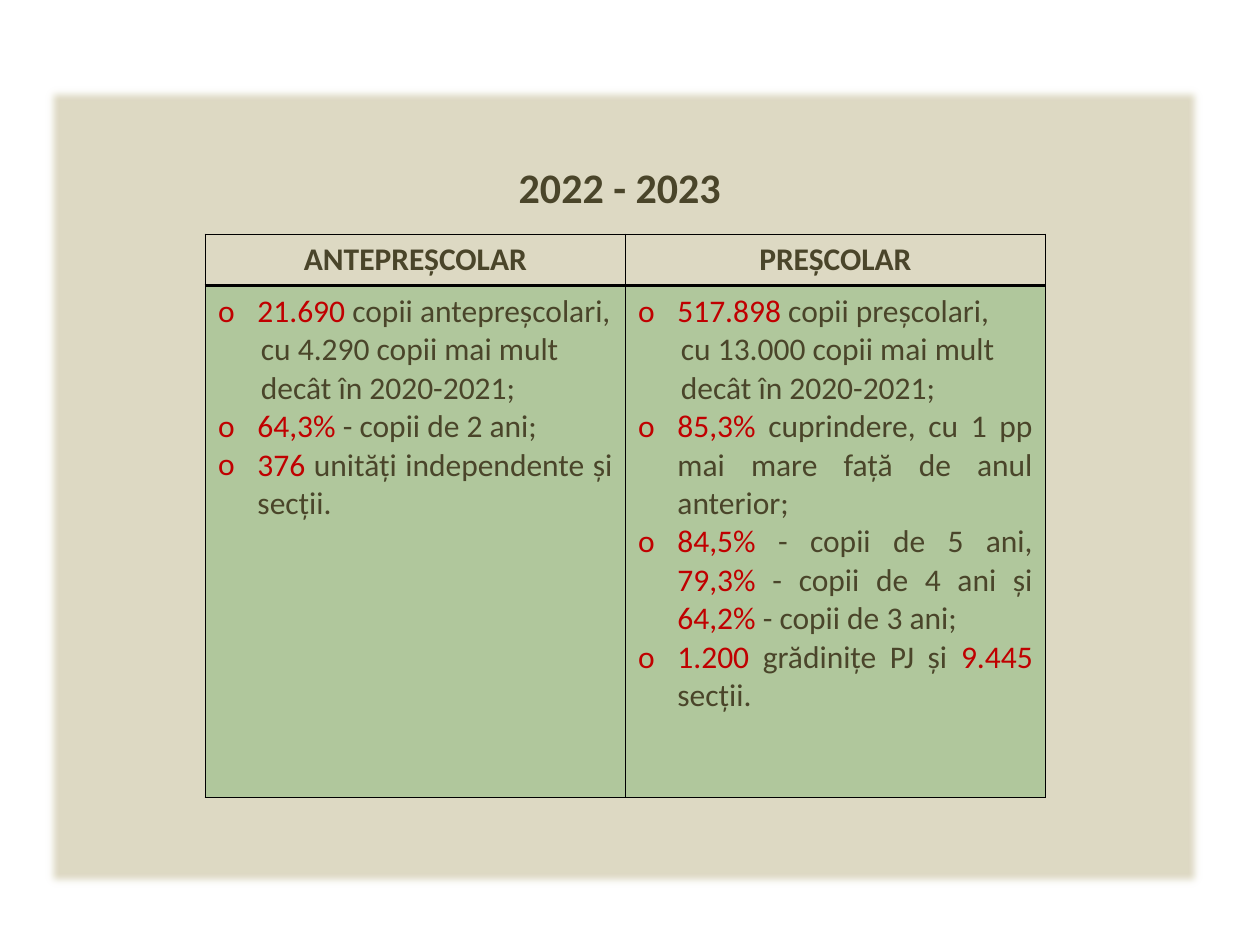
"""Build the 2022 - 2023 slide on early and preschool numbers."""
from dataclasses import dataclass

from lxml import etree
from pptx import Presentation
from pptx.dml.color import RGBColor
from pptx.enum.shapes import MSO_SHAPE
from pptx.enum.text import PP_ALIGN
from pptx.oxml.ns import qn
from pptx.util import Pt

RECT = MSO_SHAPE.RECTANGLE
MID, FULL = PP_ALIGN.CENTER, PP_ALIGN.JUSTIFY

TITLE = "2022 - 2023"
# Parts between bars alternate: accent, plain, accent, plain.
COLS = {
    "ANTEPREȘCOLAR": [
        "21.690| copii antepreșcolari,",
        "cu 4.290 copii mai mult",
        "decât în 2020-2021;",
        "64,3%| - copii de 2 ani;",
        "376| unități independente și secții.",
    ],
    "PREȘCOLAR": [
        "517.898| copii preșcolari,",
        "cu 13.000 copii mai mult",
        "decât în 2020-2021;",
        "85,3%| cuprindere, cu 1 pp mai mare față de anul anterior;",
        "84,5%| - copii de 5 ani, |79,3%| - copii de 4 ani și |64,2%| - copii de 3 ani;",
        "1.200| grădinițe PJ și |9.445| secții.",
    ],
}


@dataclass(frozen=True)
class Theme:
    """Hold colours, font and sizes."""
    panel: str = "DDD9C3"
    green: str = "008000"
    ink: str = "4A452A"
    red: str = "C00000"
    line: str = "000000"
    font: str = "Calibri"
    head: int = 24
    body: int = 18


T = Theme()
PANEL = (25.2, 49, 663.1, 459.4)
TABLE = (117.4, 133.9, 480)
ROWS = (29.5, 292.4)
HANG, STEP = 22.5, 24.5


def add(node, tag, **attrs):
    """Append a child element with the given attributes."""
    return etree.SubElement(node, qn(tag), {k: str(v) for k, v in attrs.items()})


def write(par, text, size=T.body, bold=False, align=FULL, left=0, mark=None):
    """Write one paragraph, with every other part in the accent colour."""
    par.alignment = align
    props = par._p.get_or_add_pPr()
    props.set("marL", str(Pt(left)))
    props.set("indent", str(Pt(-left if mark else 0)))
    if mark:
        add(props, "a:buFont", typeface=T.font)
        add(props, "a:buChar", char=mark)
    else:
        add(props, "a:buNone")
    parts = text.split("|")
    for i, part in enumerate(parts):
        run = par.add_run()
        run.text = part
        font = run.font
        font.name, font.size, font.bold = T.font, Pt(size), bold
        hot = len(parts) > 1 and i % 2 == 0
        font.color.rgb = RGBColor.from_string(T.red if hot else T.ink)


def edge(cell, top, base):
    """Draw the four borders of a cell."""
    props = cell._tc.get_or_add_tcPr()
    for i, (side, width) in enumerate(zip("LRTB", (1, 1, top, base))):
        line = add(props, "a:ln" + side, w=Pt(width))
        add(add(line, "a:solidFill"), "a:srgbClr", val=T.line)
        props.insert(i, line)


def tint(cell, color, alpha):
    """Fill a cell with a see-through colour."""
    cell.fill.solid()
    cell.fill.fore_color.rgb = RGBColor.from_string(color)
    tone = cell._tc.tcPr.find(".//" + qn("a:srgbClr"))
    add(tone, "a:alpha", val=alpha * 1000)


def panel(slide):
    """Add the soft-edged backing panel."""
    shape = slide.shapes.add_shape(RECT, *map(Pt, PANEL))
    shape.fill.solid()
    shape.fill.fore_color.rgb = RGBColor.from_string(T.panel)
    shape.line.fill.background()
    shape.shadow.inherit = False
    effect = shape._element.spPr.find(qn("a:effectLst"))
    add(effect, "a:softEdge", rad=Pt(5))


def table(slide):
    """Add the table of two groups."""
    left, top, width = TABLE
    box = map(Pt, (left, top, width, sum(ROWS)))
    grid = slide.shapes.add_table(len(ROWS), len(COLS), *box).table
    grid.first_row = grid.horz_banding = False
    for row, high in zip(grid.rows, ROWS):
        row.height = Pt(high)
    for i, (name, lines) in enumerate(COLS.items()):
        grid.columns[i].width = Pt(width / len(COLS))
        head, body = grid.cell(0, i), grid.cell(1, i)
        head.fill.background()
        edge(head, 1, 2)
        write(head.text_frame.paragraphs[0], name, bold=True, align=MID)
        tint(body, T.green, 20)
        edge(body, 2, 1)
        frame = body.text_frame
        for j, text in enumerate(lines):
            par = frame.add_paragraph() if j else frame.paragraphs[0]
            item = "|" in text
            write(par, text, left=HANG if item else STEP, mark="o" if item else None)


def main():
    """Build and save the slide."""
    deck = Presentation()
    deck.slide_width, deck.slide_height = Pt(720), Pt(540)
    slide = deck.slides.add_slide(deck.slide_layouts[6])
    panel(slide)
    table(slide)
    box = slide.shapes.add_textbox(Pt(275), Pt(88.6), Pt(158.4), Pt(36))
    box.text_frame.word_wrap = True
    write(box.text_frame.paragraphs[0], TITLE, size=T.head, bold=True, align=MID)
    deck.save("out.pptx")


if __name__ == "__main__":
    main()
